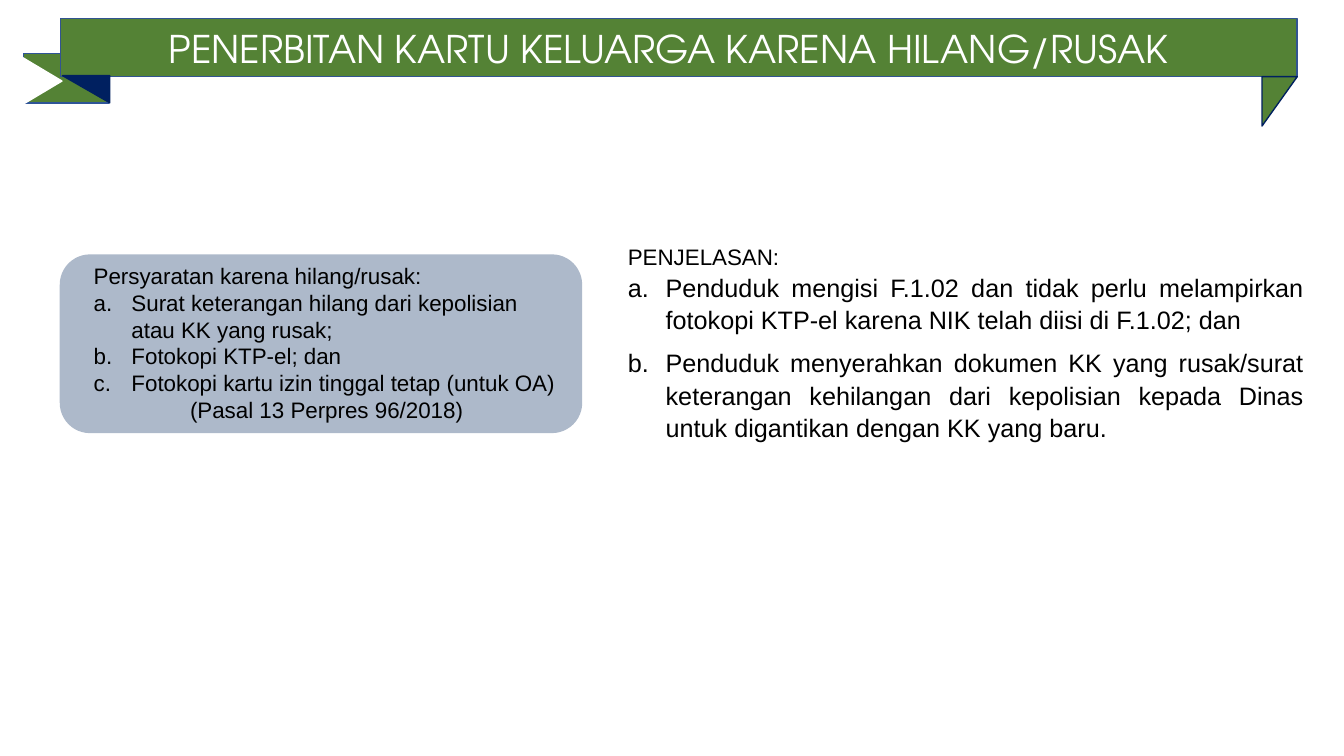
import pptx
import pptx.util
import pptx.dml.color
import pptx.enum.shapes
import pptx.enum.text
import pptx.oxml.ns
import lxml.etree

Pt = pptx.util.Pt
SHAPE = pptx.enum.shapes.MSO_SHAPE
ALIGN = pptx.enum.text.PP_ALIGN
ANCHOR = pptx.enum.text.MSO_ANCHOR
AUTOSIZE = pptx.enum.text.MSO_AUTO_SIZE
GREEN, NAVY, WHITE, GREY = "548235", "002060", "FFFFFF", "ADB9CA"
LIST_INDENT = Pt(27)


def color(hex_value):
    return pptx.dml.color.RGBColor.from_string(hex_value)


def apply(target, formats):
    for name, value in formats.items():
        setattr(target, name, value)


def add_block(slide, kind, box, fill, line, rotation=0):
    sp = slide.shapes.add_shape(kind, *map(Pt, box))
    sp.rotation = rotation
    sp.shadow.inherit = False
    sp.fill.solid()
    sp.fill.fore_color.rgb = color(fill)
    sp.line.color.rgb = color(line)
    sp.line.width = Pt(1)


def write(p, text, size, font="Arial", hex_value="000000", **formats):
    r = p.add_run()
    r.text = text
    apply(r.font, {"name": font, "size": Pt(size), "bold": False})
    r.font.color.rgb = color(hex_value)
    apply(p, formats)


def number(p):
    pPr = p._p.get_or_add_pPr()
    pPr.set("marL", str(LIST_INDENT))
    pPr.set("indent", str(-LIST_INDENT))
    bullet = lxml.etree.SubElement(pPr, pptx.oxml.ns.qn("a:buAutoNum"))
    bullet.set("type", "alphaLcPeriod")


def add_list(slide, box, heading, items, size, closing=None, **formats):
    tf = slide.shapes.add_textbox(*map(Pt, box)).text_frame
    apply(tf, {"word_wrap": True, "auto_size": AUTOSIZE.SHAPE_TO_FIT_TEXT})
    write(tf.paragraphs[0], heading, 16)
    for item in items:
        p = tf.add_paragraph()
        write(p, item, size, **formats)
        number(p)
    if closing:
        write(tf.add_paragraph(), closing, 16, alignment=ALIGN.CENTER)


def place_title(slide, box, text):
    sp = slide.shapes.title
    apply(sp, dict(zip(("left", "top", "width", "height"), map(Pt, box))))
    tf = sp.text_frame
    apply(tf, {"word_wrap": True, "auto_size": AUTOSIZE.NONE,
               "vertical_anchor": ANCHOR.MIDDLE})
    write(tf.paragraphs[0], text, 27.2, "TeX Gyre Adventor", WHITE,
          alignment=ALIGN.CENTER, line_spacing=0.8)
    sp.element.getparent().append(sp.element)


def add_ribbon(slide):
    add_block(slide, SHAPE.RECTANGLE, (16.6, 38.2, 61.2, 35.3), GREEN, "2F5597")
    add_block(slide, SHAPE.RECTANGLE, (43.2, 13, 883.4, 41.8), GREEN, "325491")
    add_block(slide, SHAPE.RIGHT_TRIANGLE, (896.4, 59.8, 35.3, 25.2), GREEN, NAVY, 90)
    add_block(slide, SHAPE.RIGHT_TRIANGLE, (44.6, 54, 33.8, 19.4), NAVY, NAVY, 180)
    add_block(slide, SHAPE.ISOSCELES_TRIANGLE, (7.2, 41, 40.3, 33.8), WHITE, WHITE, 90)


def main():
    prs = pptx.Presentation()
    apply(prs, {"slide_width": Pt(960), "slide_height": Pt(540)})
    slide = prs.slides.add_slide(prs.slide_layouts[5])
    add_ribbon(slide)
    place_title(slide, (73.4, 13.7, 808.6, 47.5),
                "PENERBITAN KARTU KELUARGA KARENA HILANG/RUSAK")
    add_list(slide, (441.4, 169.9, 496.8, 150.5), "PENJELASAN:", [
        "Penduduk mengisi F.1.02 dan tidak perlu melampirkan fotokopi KTP-el "
        "karena NIK telah diisi di F.1.02; dan",
        "Penduduk menyerahkan dokumen KK yang rusak/surat keterangan kehilangan "
        "dari kepolisian kepada Dinas untuk digantikan dengan KK yang baru.",
    ], 18, alignment=ALIGN.JUSTIFY, line_spacing=1.07, space_after=Pt(8))
    add_block(slide, SHAPE.ROUNDED_RECTANGLE, (43.2, 182.2, 372.2, 126.7), GREY, GREY)
    add_list(slide, (59.8, 183.6, 347, 123.8), "Persyaratan karena hilang/rusak:", [
        "Surat keterangan hilang dari kepolisian atau KK yang rusak;",
        "Fotokopi KTP-el; dan",
        "Fotokopi kartu izin tinggal tetap (untuk OA)",
    ], 16, "(Pasal 13 Perpres 96/2018)")
    prs.save("out.pptx")


if __name__ == "__main__":
    main()
